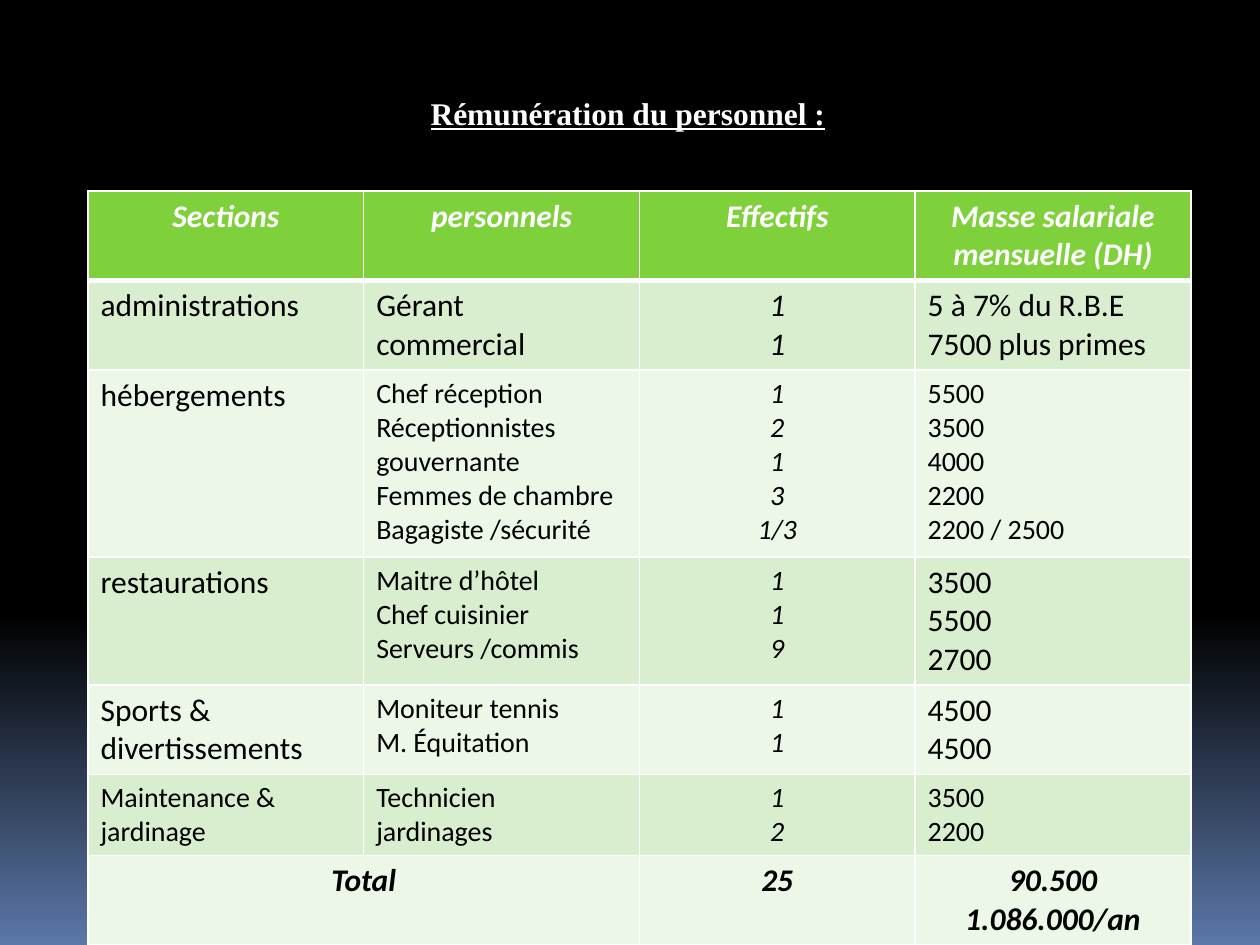
from copy import deepcopy
from lxml.etree import SubElement as Sub
from pptx import Presentation
from pptx.dml.color import RGBColor
from pptx.enum.text import PP_ALIGN as Align, MSO_ANCHOR as Anchor
from pptx.oxml.ns import qn
from pptx.util import Pt

# Content: each cell is (text size, lines)
TITLE = "Rémunération du personnel :"
ROWS = [
    [(18, ["Sections"]), (18, ["personnels"]), (18, ["Effectifs"]),
     (18, ["Masse salariale mensuelle (DH)"])],
    [(18, ["administrations"]), (18, ["Gérant", "commercial"]),
     (18, ["1", "1"]), (18, ["5 à 7% du R.B.E", "7500 plus primes"])],
    [(18, ["hébergements"]),
     (16, ["Chef réception", "Réceptionnistes", "gouvernante",
           "Femmes de chambre", "Bagagiste /sécurité"]),
     (16, ["1", "2", "1", "3", "1/3"]),
     (16, ["5500", "3500", "4000", "2200", "2200 / 2500"])],
    [(18, ["restaurations"]),
     (16, ["Maitre d’hôtel", "Chef cuisinier", "Serveurs /commis"]),
     (16, ["1", "1", "9"]), (18, ["3500", "5500", "2700"])],
    [(18, ["Sports & divertissements"]),
     (16, ["Moniteur tennis", "M. Équitation"]),
     (16, ["1", "1"]), (18, ["4500", "4500"])],
    [(16, ["Maintenance & jardinage"]), (16, ["Technicien", "jardinages"]),
     (16, ["1", "2"]), (16, ["3500", "2200"])],
    [(18, ["Total"]), None, (18, ["25"]), (18, ["90.500", "1.086.000/an"])],
]
HEIGHTS = [88, 89, 187, 126, 88, 80, 88]
HEAD, BANDS = "7FD13B", ["ECF7E8", "D8EECE"]
STOPS = [(0, "000000"), (0.65, "000000"), (1, "5B77A8")]
COUNT = 2  # column of the staff numbers


def px(n):
    return round(n * 914400 / 126)


def color(code):
    return RGBColor.from_string(code)


def border(cell, side, width):
    line = Sub(cell._tc.get_or_add_tcPr(), qn("a:ln" + side), w=str(Pt(width)))
    Sub(Sub(line, qn("a:solidFill")), qn("a:srgbClr"), val="FFFFFF")


def style(par, size, name, code, bold, italic=False):
    font = par.font
    font.size, font.name = Pt(size), name
    font.bold, font.italic = bold, italic
    font.color.rgb = color(code)


deck = Presentation()
deck.slide_width, deck.slide_height = px(1260), px(945)
slide = deck.slides.add_slide(deck.slide_layouts[5])

# Background: black fading to blue at the bottom
fill = slide.background.fill
fill.gradient()
fill.gradient_angle = 270
first = slide.element.xpath(".//p:bg//a:gs")[0]
first.addnext(deepcopy(first))
for stop, (pos, code) in zip(fill.gradient_stops, STOPS):
    stop.position = pos
    stop.color.rgb = color(code)

# Title
title = slide.shapes.title
title.left, title.top, title.width, title.height = map(px, (418, 88, 423, 50))
frame = title.text_frame
frame.text = TITLE
frame.word_wrap = False
frame.vertical_anchor = Anchor.MIDDLE
par = frame.paragraphs[0]
par.alignment = Align.LEFT
style(par, 18, "Times New Roman", "FFFFFF", True)
par.font.underline = True

# Table
last = len(ROWS) - 1
table = slide.shapes.add_table(len(ROWS), 4, px(88), px(191), px(1103),
                               px(sum(HEIGHTS))).table
for row, high in zip(table.rows, HEIGHTS):
    row.height = px(high)
table.cell(last, 0).merge(table.cell(last, 1))

for r, row in enumerate(ROWS):
    strong = r in (0, last)
    for c, item in enumerate(row):
        cell = table.cell(r, c)
        for side in "LRTB":
            thick = (r, side) in ((0, "B"), (1, "T"))
            border(cell, side, 3 if thick else 1)
        cell.fill.solid()
        cell.fill.fore_color.rgb = color(BANDS[r % 2] if r else HEAD)
        if not item:
            continue
        size, lines = item
        cell.text_frame.text = "\n".join(lines)
        mid = strong or c == COUNT
        for par in cell.text_frame.paragraphs:
            par.alignment = Align.CENTER if mid else Align.LEFT
            style(par, size, "Calibri", "000000" if r else "FFFFFF",
                  strong, mid)

deck.save("out.pptx")
